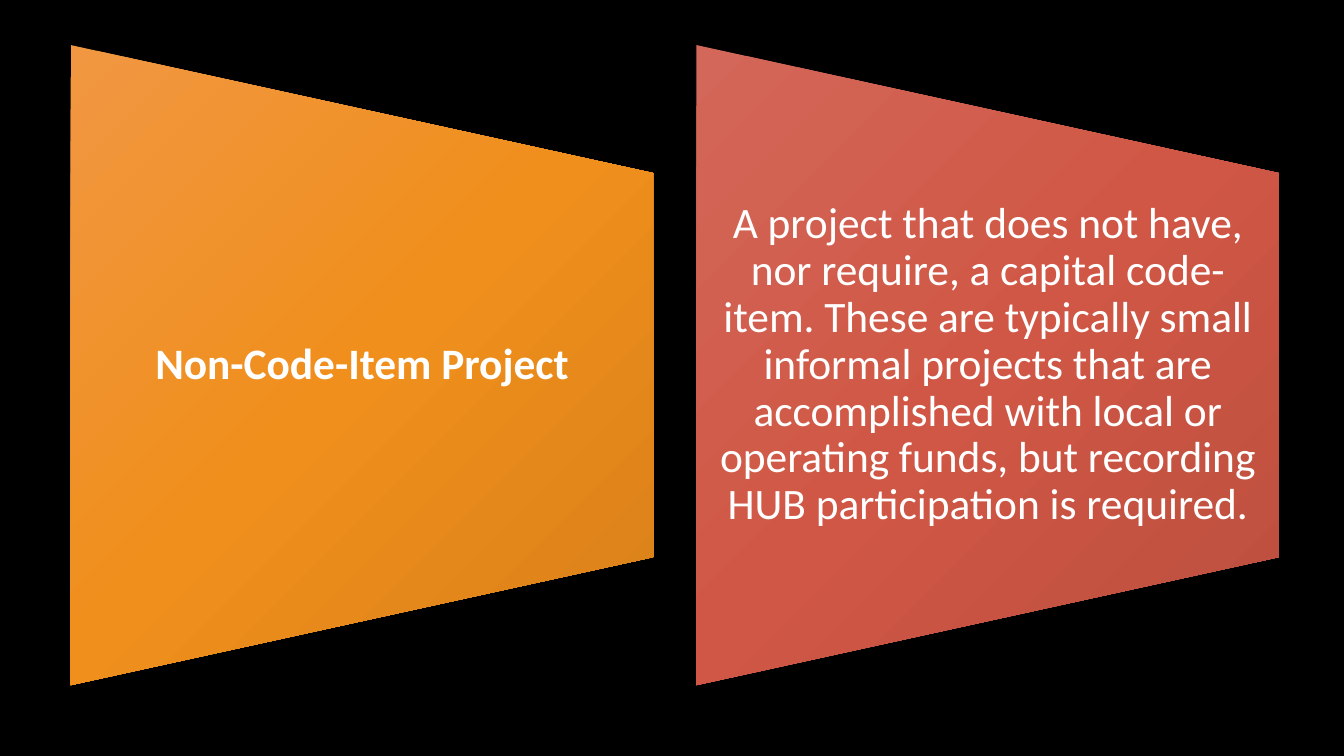
from copy import deepcopy
from dataclasses import dataclass

from lxml import etree
from pptx import Presentation
from pptx.dml.color import RGBColor
from pptx.enum.shapes import MSO_SHAPE
from pptx.enum.text import MSO_ANCHOR, MSO_AUTO_SIZE, PP_ALIGN
from pptx.oxml.ns import qn
from pptx.util import Cm, Pt

TRAPEZOID = MSO_SHAPE.FLOWCHART_MANUAL_OPERATION
MIDDLE = MSO_ANCHOR.MIDDLE
CENTER = PP_ALIGN.CENTER
NO_AUTOFIT = MSO_AUTO_SIZE.NONE

# Content: term and definition
TERM = "Non-Code-Item Project"
DEFINITION = (
    "A project that does not have, nor require, a capital code-item. "
    "These are typically small informal projects that are accomplished "
    "with local or operating funds, but recording HUB participation is required."
)


@dataclass(frozen=True)
class Theme:
    background: str = "000000"
    text: str = "FFFFFF"
    orange: tuple = ("F19742", "F08F1C", "D88019")
    red: tuple = ("D36759", "D05745", "BB4E3E")
    font: str = "Calibri"
    size: int = 31


THEME = Theme()

# Layout in centimetres
PANEL_LEFT, PANEL_PITCH, PANEL_MIDDLE = 1.78, 15.77, 9.2
PANEL_WIDTH, PANEL_HEIGHT = 14.68, 16.13
TEXT_HEIGHT, TEXT_INSET = 9.68, 0.56


def color(value):
    return RGBColor.from_string(value)


def add_panel(slide, left, colors):
    # The trapezoid is turned on its side, so its own width is the panel height
    shape = slide.shapes.add_shape(
        TRAPEZOID,
        Cm(left + (PANEL_WIDTH - PANEL_HEIGHT) / 2),
        Cm(PANEL_MIDDLE - PANEL_WIDTH / 2),
        Cm(PANEL_HEIGHT),
        Cm(PANEL_WIDTH),
    )
    shape.rotation = 270
    shape.shadow.inherit = False
    shape.line.fill.background()

    # Three-stop diagonal gradient that stays fixed while the shape turns
    shape.fill.gradient()
    shape.fill.gradient_angle = 315
    gradient = shape.element.spPr.find(qn("a:gradFill"))
    gradient.set("rotWithShape", "0")
    stops = gradient.find(qn("a:gsLst"))
    stops.insert(1, deepcopy(stops[0]))
    for index, stop in enumerate(shape.fill.gradient_stops):
        stop.position = index / 2
        stop.color.rgb = color(colors[index])
    return shape


def set_text(placeholder, left, text, bold):
    placeholder.left, placeholder.top = Cm(left), Cm(PANEL_MIDDLE - TEXT_HEIGHT / 2)
    placeholder.width, placeholder.height = Cm(PANEL_WIDTH), Cm(TEXT_HEIGHT)
    frame = placeholder.text_frame
    frame.word_wrap = True
    frame.auto_size = NO_AUTOFIT
    frame.vertical_anchor = MIDDLE
    frame.margin_left = frame.margin_right = Cm(TEXT_INSET)
    frame.margin_top = frame.margin_bottom = 0

    paragraph = frame.paragraphs[0]
    paragraph.alignment = CENTER
    paragraph.line_spacing = 0.9
    paragraph.space_before = Pt(0)
    properties = paragraph._p.get_or_add_pPr()
    properties.set("marL", "0")
    properties.set("indent", "0")
    etree.SubElement(properties, qn("a:buNone"))

    run = paragraph.add_run()
    run.text = text
    run.font.name = THEME.font
    run.font.size = Pt(THEME.size)
    run.font.bold = bold
    run.font.color.rgb = color(THEME.text)


def main():
    presentation = Presentation()
    presentation.slide_width, presentation.slide_height = Cm(33.87), Cm(19.05)
    slide = presentation.slides.add_slide(presentation.slide_layouts[1])
    slide.background.fill.solid()
    slide.background.fill.fore_color.rgb = color(THEME.background)

    # Panels, each placed behind its text
    panels = (
        (slide.shapes.title, TERM, THEME.orange, True),
        (slide.placeholders[1], DEFINITION, THEME.red, False),
    )
    for index, (placeholder, text, colors, bold) in enumerate(panels):
        left = PANEL_LEFT + index * PANEL_PITCH
        panel = add_panel(slide, left, colors)
        placeholder.element.addprevious(panel.element)
        set_text(placeholder, left, text, bold)

    presentation.save("out.pptx")


if __name__ == "__main__":
    main()
